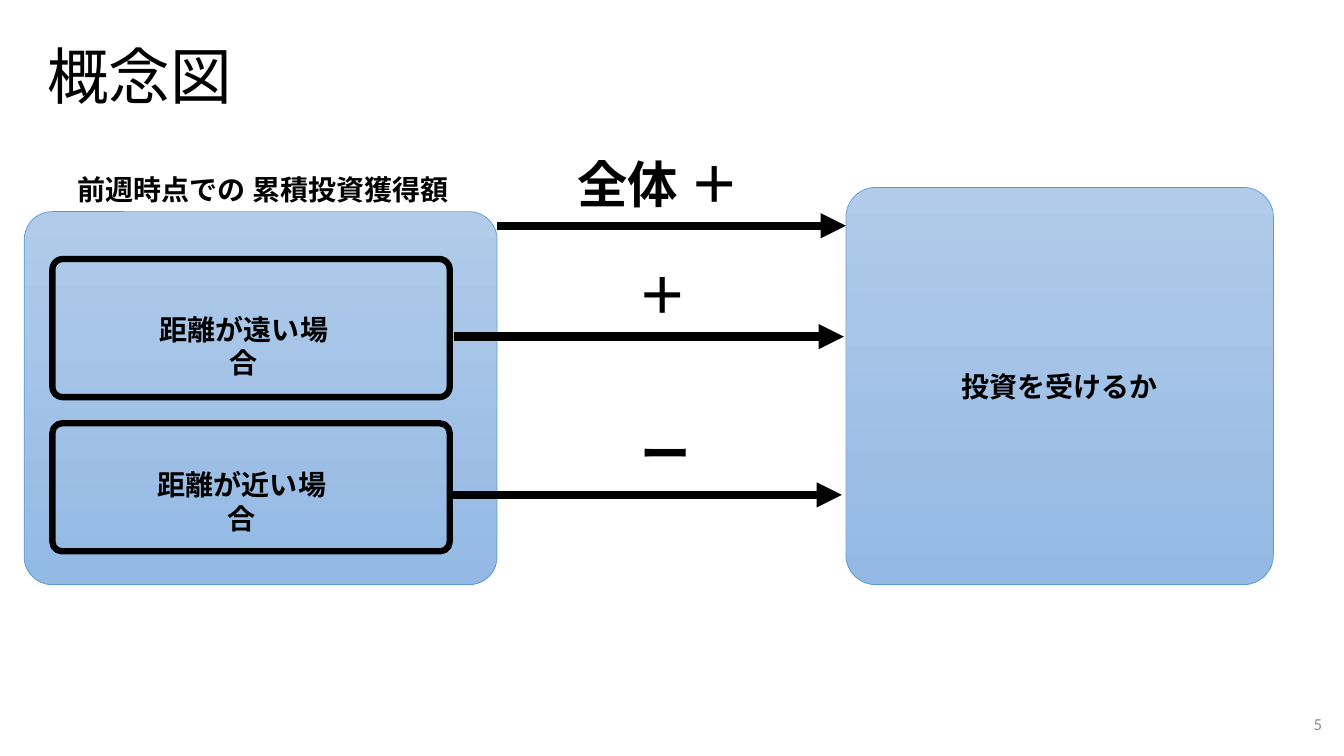
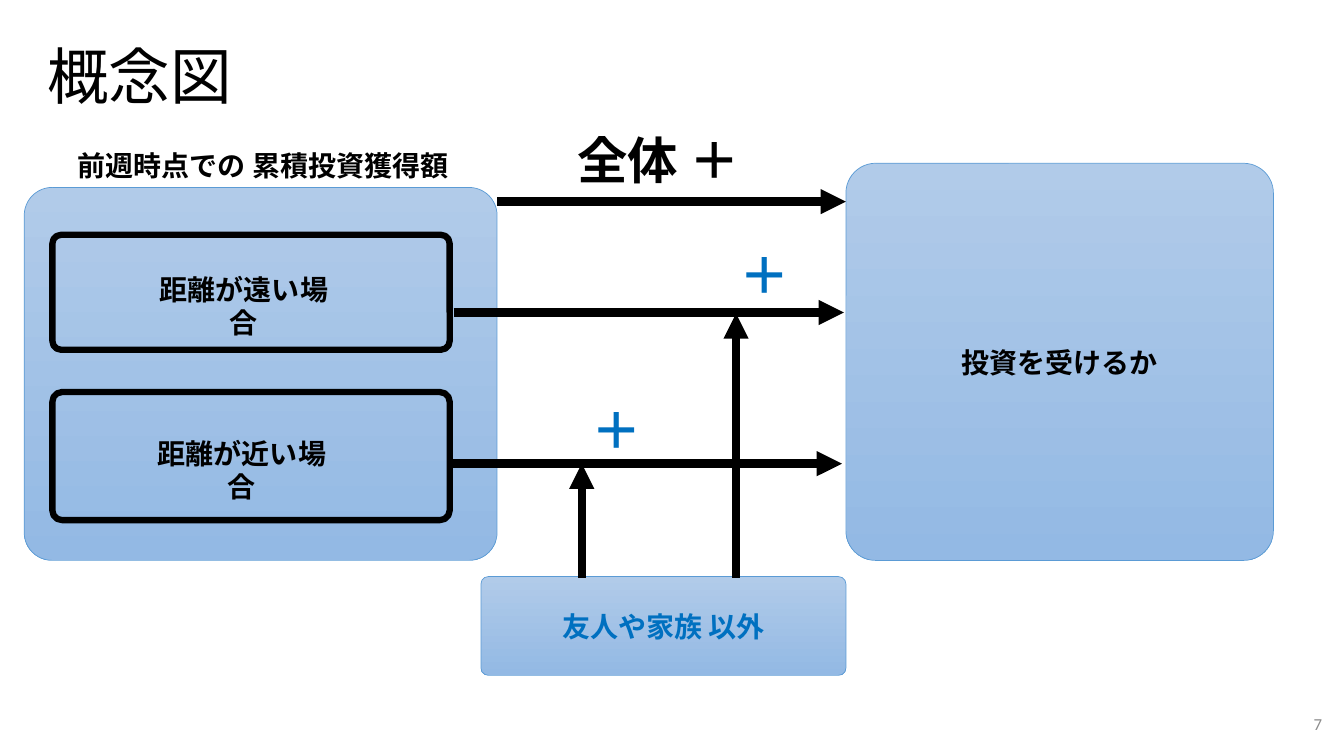
"""Build two concept diagrams of investment, with and without the moderator."""
from lxml.etree import SubElement
from pptx import Presentation
from pptx.dml.color import RGBColor
from pptx.enum.lang import MSO_LANGUAGE_ID as LANGUAGE
from pptx.enum.shapes import MSO_CONNECTOR as CONNECTOR, MSO_SHAPE as SHAPE
from pptx.enum.text import MSO_ANCHOR as ANCHOR, PP_ALIGN as ALIGN
from pptx.oxml.ns import qn
from pptx.util import Inches, Pt

BLACK = RGBColor(0x00, 0x00, 0x00)
ACCENT = RGBColor(0x00, 0x70, 0xC0)
GRAY = RGBColor(0x8C, 0x8C, 0x8C)
EDGE = RGBColor(0x5B, 0x9B, 0xD5)
PANEL_TOP = RGBColor(0xB1, 0xCB, 0xE9)
PANEL_BOTTOM = RGBColor(0x93, 0xB9, 0xE4)


def write(box, text, size, color=BLACK, font="Arial", bold=True,
          align=ALIGN.CENTER, anchor=ANCHOR.TOP, wrap=True):
    frame = box.text_frame
    frame.word_wrap = wrap
    frame.vertical_anchor = anchor
    para = frame.paragraphs[0]
    para.alignment = align
    span = para.add_run()
    span.text = text
    span.font.name = font
    span.font.size = Pt(size)
    span.font.bold = bold
    span.font.color.rgb = color
    span.font.language_id = LANGUAGE.JAPANESE
    return para


def add_panel(page, bounds, filled=True):
    panel = page.shapes.add_shape(SHAPE.ROUNDED_RECTANGLE, *map(Inches, bounds))
    panel.adjustments[0] = 0.075
    panel.shadow.inherit = False
    if filled:
        panel.fill.gradient()
        panel.fill.gradient_angle = 270
        for stop, color in zip(panel.fill.gradient_stops, (PANEL_TOP, PANEL_BOTTOM)):
            stop.color.rgb = color
    else:
        panel.fill.background()
    panel.line.color.rgb = EDGE if filled else BLACK
    panel.line.width = Pt(0.5 if filled else 4.5)
    return panel


DIAGRAMS = [
    {
        "number": "5", "top": 1.86,
        "cases": [("距離が遠い場合", 1.38, 3.05, 2.57, 1.37),
                  ("距離が近い場合", 1.36, 4.59, 4.2, 1.27)],
        "signs": [("＋", 6.22, 2.57, 0.71, BLACK), ("ー", 6.25, 4.14, 0.62, BLACK)],
        "arrows": [(4.5, 3.34, 8.37, 3.34), (4.48, 4.91, 8.35, 4.91)],
        "moderator": None,
    },
    {
        "number": "7", "top": 1.62,
        "cases": [("距離が遠い場合", 1.38, 2.65, 2.33, 1.14),
                  ("距離が近い場合", 1.36, 4.28, 3.89, 1.27)],
        "signs": [("＋", 7.23, 2.37, 0.71, ACCENT), ("＋", 5.76, 3.91, 0.71, ACCENT)],
        "arrows": [(4.5, 3.1, 8.37, 3.1), (4.48, 4.6, 8.35, 4.6),
                   (7.3, 5.73, 7.3, 3.11), (5.77, 5.73, 5.77, 4.6)],
        "moderator": "友人や家族 以外",
    },
]

deck = Presentation()
deck.slide_width = Inches(13.33)
deck.slide_height = Inches(7.5)

for diagram in DIAGRAMS:
    page = deck.slides.add_slide(deck.slide_layouts[6])
    top = diagram["top"]

    title = page.shapes.add_textbox(Inches(0.37), Inches(0.19), Inches(12.05), Inches(1.19))
    heading = write(title, "概念図", 44, font="Calibri", bold=False,
                    align=ALIGN.LEFT, anchor=ANCHOR.MIDDLE)
    heading.line_spacing = 0.9
    number = page.shapes.add_textbox(Inches(12.42), Inches(6.95), Inches(0.79), Inches(0.47))
    write(number, diagram["number"], 12, GRAY, "Calibri", False, ALIGN.RIGHT, ANCHOR.MIDDLE)

    outcome = add_panel(page, (8.39, top, 4.24, 3.94))
    write(outcome, "投資を受けるか", 20, font="Calibri", anchor=ANCHOR.MIDDLE)
    add_panel(page, (0.24, top + 0.24, 4.69, 3.7))
    cause = page.shapes.add_textbox(Inches(0.6), Inches(top - 0.2), Inches(4.02), Inches(0.44))
    write(cause, "前週時点での 累積投資獲得額", 20)

    for text, left, text_top, frame_top, height in diagram["cases"]:
        label = page.shapes.add_textbox(Inches(left), Inches(text_top), Inches(2.08), Inches(0.44))
        write(label, text, 20)
        add_panel(page, (0.52, frame_top, 3.94, height), filled=False)

    overall = ("全体 ＋", 5.6, top - 0.39, 1.86, BLACK)
    for text, left, sign_top, width, color in [overall, *diagram["signs"]]:
        sign = page.shapes.add_textbox(Inches(left), Inches(sign_top), Inches(width), Inches(0.71))
        write(sign, text, 36, color, wrap=False)

    if diagram["moderator"]:
        moderator = add_panel(page, (4.77, 5.72, 3.62, 0.98))
        write(moderator, diagram["moderator"], 20, ACCENT, "Calibri", anchor=ANCHOR.MIDDLE)

    for ends in [(4.93, top + 0.38, 8.39, top + 0.38), *diagram["arrows"]]:
        arrow = page.shapes.add_connector(CONNECTOR.STRAIGHT, *map(Inches, ends))
        arrow.line.color.rgb = BLACK
        arrow.line.width = Pt(6)
        SubElement(arrow.line._get_or_add_ln(), qn("a:tailEnd"), type="triangle")
        SubElement(arrow._element.spPr, qn("a:effectLst"))

deck.save("out.pptx")
